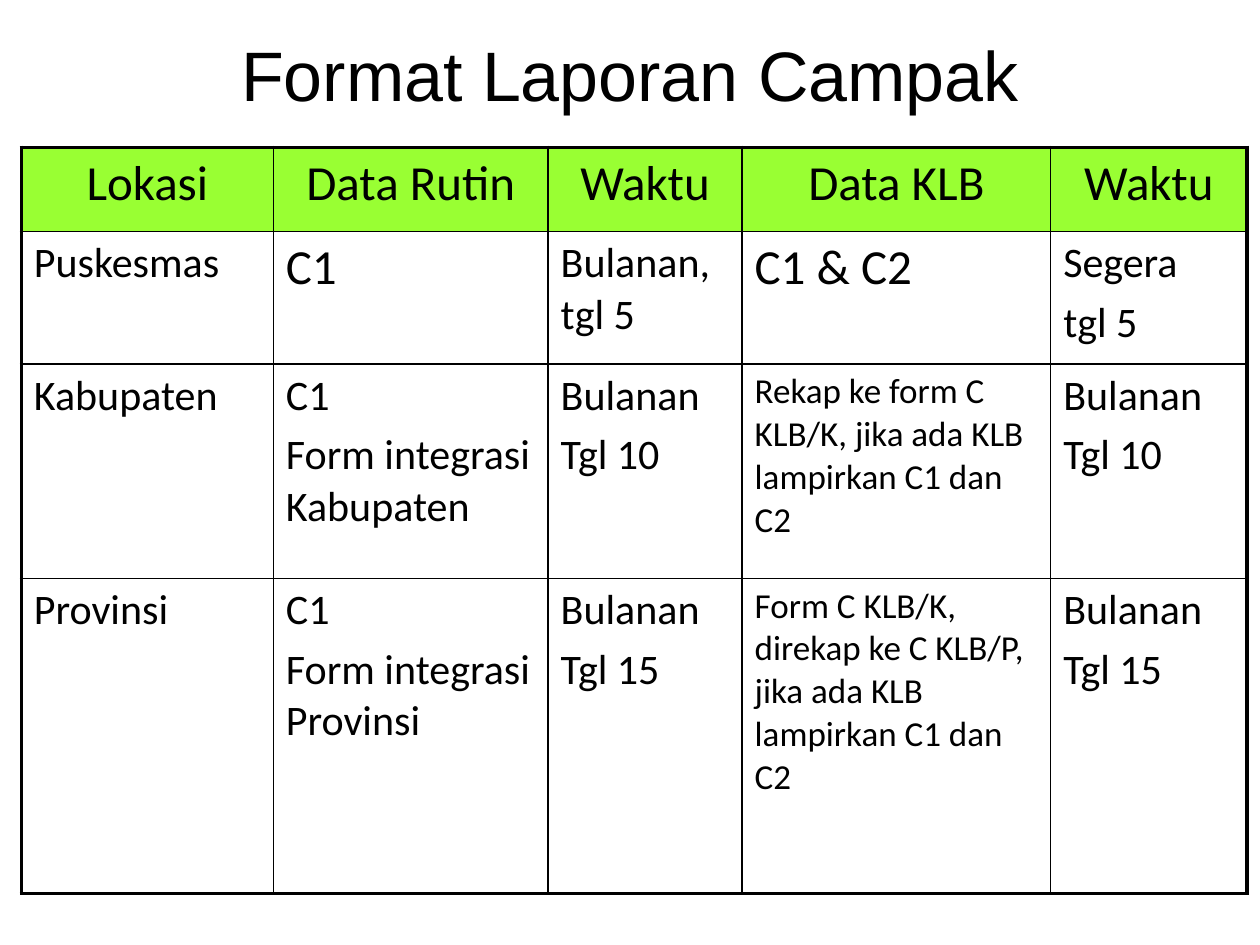
"""Build the measles report format slide."""
from lxml import etree
from pptx import Presentation
from pptx import util as u
from pptx.dml.color import RGBColor
from pptx.enum import text
from pptx.oxml import ns

TITLE = "Format Laporan Campak"
HEAD = ["Lokasi", "Data Rutin", "Waktu", "Data KLB", "Waktu"]
ROWS = [
    ["Puskesmas", "C1", "Bulanan, tgl 5", "C1 & C2", "Segera\ntgl 5"],
    ["Kabupaten", "C1\nForm integrasi Kabupaten", "Bulanan\nTgl 10",
     "Rekap ke form C KLB/K, jika ada KLB lampirkan C1 dan C2", "Bulanan\nTgl 10"],
    ["Provinsi", "C1\nForm integrasi Provinsi", "Bulanan\nTgl 15",
     "Form C KLB/K, direkap ke C KLB/P, jika ada KLB lampirkan C1 dan C2",
     "Bulanan\nTgl 15"],
]
WIDTHS = [5.08, 5.54, 3.91, 6.22, 3.96]
HEIGHTS = [1.7, 2.67, 4.32, 6.35]
LEFT, TOP = 0.43, 2.97
THEME = {
    "ink": "000000", "head": "99FF33",
    "title": ("Arial", 40), "large": ("Calibri", 28),
    "body": ("Calibri", 24), "small": ("Calibri", 20),
    "thin": 1, "thick": 2.25,
}
LARGE = {(1, 1), (1, 3)}
SMALL = {(2, 3), (3, 3)}


def style(frame, role, align):
    font, size = THEME[role]
    for i, para in enumerate(frame.paragraphs):
        para.alignment = align
        para.space_before = u.Pt(size * 0.2 if i else 0)
        for run in para.runs:
            run.font.name = font
            run.font.size = u.Pt(size)
            run.font.color.rgb = RGBColor.from_string(THEME["ink"])


def border(cell, side, width):
    props = cell._tc.get_or_add_tcPr()
    line = etree.SubElement(props, ns.qn(f"a:ln{side}"), w=str(u.Pt(width)))
    fill = etree.SubElement(line, ns.qn("a:solidFill"))
    etree.SubElement(fill, ns.qn("a:srgbClr"), val=THEME["ink"])


def role(row, col):
    if row == 0 or (row, col) in LARGE:
        return "large"
    return "small" if (row, col) in SMALL else "body"


def add_title(slide):
    box = slide.shapes.add_textbox(u.Cm(1.27), u.Cm(0.43), u.Cm(22.86), u.Cm(2.03))
    frame = box.text_frame
    frame.word_wrap = True
    frame.vertical_anchor = text.MSO_ANCHOR.BOTTOM
    frame.text = TITLE
    style(frame, "title", text.PP_ALIGN.CENTER)


def add_grid(slide):
    data = [HEAD] + ROWS
    last, end = len(data) - 1, len(HEAD) - 1
    grid = slide.shapes.add_table(
        len(data), len(HEAD), u.Cm(LEFT), u.Cm(TOP),
        u.Cm(sum(WIDTHS)), u.Cm(sum(HEIGHTS))).table
    grid.first_row = grid.horz_banding = False
    for col, width in zip(grid.columns, WIDTHS):
        col.width = u.Cm(width)
    for row, height in zip(grid.rows, HEIGHTS):
        row.height = u.Cm(height)
    for r, row in enumerate(data):
        for c, words in enumerate(row):
            cell = grid.cell(r, c)
            cell.text_frame.text = words
            align = text.PP_ALIGN.LEFT if r else text.PP_ALIGN.CENTER
            style(cell.text_frame, role(r, c), align)
            edges = {"L": c == 0, "R": c == end, "T": r == 0, "B": r == last}
            for side, outer in edges.items():
                border(cell, side, THEME["thick" if outer else "thin"])
            if r:
                cell.fill.background()
            else:
                cell.fill.solid()
                cell.fill.fore_color.rgb = RGBColor.from_string(THEME["head"])


def main():
    deck = Presentation()
    deck.slide_width, deck.slide_height = u.Cm(25.4), u.Cm(19.05)
    slide = deck.slides.add_slide(deck.slide_layouts[6])
    add_title(slide)
    add_grid(slide)
    deck.save("out.pptx")


if __name__ == "__main__":
    main()
